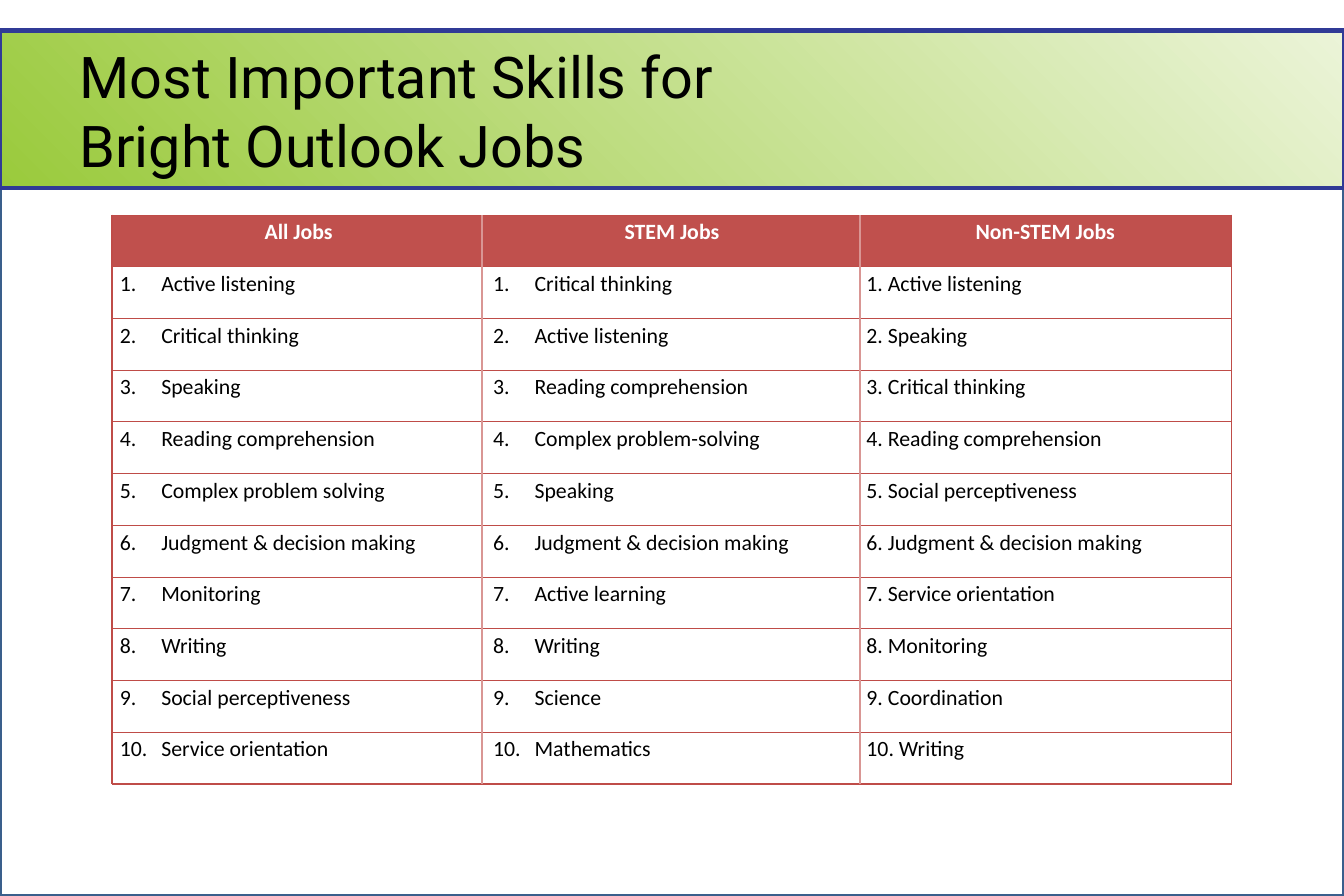
from dataclasses import dataclass

from lxml import etree
from pptx import Presentation
from pptx.dml.color import RGBColor
from pptx.enum.shapes import MSO_CONNECTOR, MSO_SHAPE
from pptx.enum.text import MSO_ANCHOR, MSO_AUTO_SIZE, PP_ALIGN
from pptx.oxml.ns import qn
from pptx.util import Inches, Pt

RECTANGLE, STRAIGHT = MSO_SHAPE.RECTANGLE, MSO_CONNECTOR.STRAIGHT
MIDDLE, NO_AUTOFIT = MSO_ANCHOR.MIDDLE, MSO_AUTO_SIZE.NONE
LEFT, CENTER = PP_ALIGN.LEFT, PP_ALIGN.CENTER


@dataclass(frozen=True)
class Theme:
    """Colours, fonts and type sizes of the slide."""
    title_font: str = "Roboto"
    table_font: str = "Calibri"
    title_size: int = 37
    table_size: int = 14
    text: str = "000000"
    header_text: str = "FFFFFF"
    header_fill: str = "C0504D"
    rule: str = "BF4C48"
    divider: str = "D99694"
    frame: str = "3A5F8C"
    band_line: str = "303A96"
    band_start: str = "9ACA3C"
    band_end: str = "EBF4D8"


THEME = Theme()
WIDTH, HEIGHT = 12, 8
TITLE = "Most Important Skills for\vBright Outlook Jobs"
SKILLS = {
    "All Jobs": [
        "Active listening", "Critical thinking", "Speaking",
        "Reading comprehension", "Complex problem solving",
        "Judgment & decision making", "Monitoring", "Writing",
        "Social perceptiveness", "Service orientation"],
    "STEM Jobs": [
        "Critical thinking", "Active listening", "Reading comprehension",
        "Complex problem-solving", "Speaking",
        "Judgment & decision making", "Active learning", "Writing",
        "Science", "Mathematics"],
    "Non-STEM Jobs": [
        "Active listening", "Speaking", "Critical thinking",
        "Reading comprehension", "Social perceptiveness",
        "Judgment & decision making", "Service orientation", "Monitoring",
        "Coordination", "Writing"],
}


def color(value):
    """Return the colour object of a hexadecimal value."""
    return RGBColor.from_string(value)


def add_panel(slide, box, line_color, line_width):
    """Add an unfilled outlined rectangle in the box."""
    panel = slide.shapes.add_shape(RECTANGLE, *map(Inches, box))
    panel.shadow.inherit = False
    panel.fill.background()
    panel.line.color.rgb = color(line_color)
    panel.line.width = Pt(line_width)
    return panel


def add_title_band(slide, box):
    """Fill the box with the gradient band and set the title on it."""
    left, top, width, height = box
    band = add_panel(slide, box, THEME.band_line, 3)
    band.fill.gradient()
    band.fill.gradient_angle = 45
    for stop, value in zip(band.fill.gradient_stops, (THEME.band_start, THEME.band_end)):
        stop.color.rgb = color(value)

    title = slide.shapes.title
    band.element.addnext(title.element)
    title.left, title.top = Inches(left + 0.05 * width), Inches(top + 0.05)
    title.width, title.height = Inches(0.9 * width), Inches(height - 0.08)
    frame = title.text_frame
    frame.text = TITLE
    frame.word_wrap, frame.auto_size = True, NO_AUTOFIT
    frame.vertical_anchor = MIDDLE
    frame.margin_left = frame.margin_right = Inches(0.11)
    frame.margin_top = frame.margin_bottom = Inches(0.06)
    paragraph = frame.paragraphs[0]
    paragraph.alignment = LEFT
    paragraph.font.name, paragraph.font.size = THEME.title_font, Pt(THEME.title_size)
    paragraph.font.color.rgb = color(THEME.text)


def set_borders(cell, sides):
    """Rule the named sides of a cell and clear the others."""
    properties = cell._tc.get_or_add_tcPr()
    for side in "LRTB":
        line = etree.SubElement(properties, qn(f"a:ln{side}"), w=str(Pt(0.75)))
        if side in sides:
            fill = etree.SubElement(line, qn("a:solidFill"))
            etree.SubElement(fill, qn("a:srgbClr"), val=THEME.rule)
        else:
            etree.SubElement(line, qn("a:noFill"))


def number_paragraph(paragraph, number):
    """Give a paragraph an automatic number and a hanging indent."""
    properties = paragraph._p.get_or_add_pPr()
    indent = Inches(0.37)
    properties.set("marL", str(indent))
    properties.set("indent", str(-indent))
    etree.SubElement(properties, qn("a:buFont"), typeface="+mj-lt")
    etree.SubElement(properties, qn("a:buAutoNum"), type="arabicPeriod", startAt=str(number))


def fill_cell(cell, text, row, column, last_column):
    """Write and format one cell of the skills table."""
    header = row == 0
    typed_number = column == last_column and not header
    cell.text = f"{row}. {text}" if typed_number else text
    cell.margin_left = cell.margin_right = Inches(0.07)
    cell.margin_top = cell.margin_bottom = 0
    set_borders(cell, "TB" + "L" * (column == 0) + "R" * (column == last_column))
    if header:
        cell.fill.solid()
        cell.fill.fore_color.rgb = color(THEME.header_fill)
    else:
        cell.fill.background()
    paragraph = cell.text_frame.paragraphs[0]
    paragraph.line_spacing = 1.15
    paragraph.alignment = CENTER if header else LEFT
    if not header and not typed_number:
        number_paragraph(paragraph, row)
    font = paragraph.font
    font.name, font.size, font.bold = THEME.table_font, Pt(THEME.table_size), header
    font.color.rgb = color(THEME.header_text if header else THEME.text)


def add_skills_table(slide, box):
    """Place the ranked skills and the column dividers in the box."""
    left, top, width, height = box
    columns = [[heading, *skills] for heading, skills in SKILLS.items()]
    row_count, last_column = len(columns[0]), len(columns) - 1
    table = slide.shapes.add_table(row_count, len(columns), *map(Inches, box)).table
    for column, texts in enumerate(columns):
        for row, text in enumerate(texts):
            fill_cell(table.cell(row, column), text, row, column, last_column)

    for share in (0.33, 0.668):
        x = Inches(left + share * width)
        divider = slide.shapes.add_connector(STRAIGHT, x, Inches(top), x, Inches(top + height))
        divider.line.color.rgb = color(THEME.divider)
        divider.line.width = Pt(1.25)
        etree.SubElement(divider.element.spPr, qn("a:effectLst"))


def main():
    """Build and save the presentation."""
    presentation = Presentation()
    presentation.slide_width, presentation.slide_height = Inches(WIDTH), Inches(HEIGHT)
    slide = presentation.slides.add_slide(presentation.slide_layouts[5])
    band_top, band_height = 0.27, 1.41
    body_top = band_top + band_height
    add_panel(slide, (0, body_top, WIDTH, HEIGHT - body_top), THEME.frame, 2)
    add_title_band(slide, (0, band_top, WIDTH, band_height))
    add_skills_table(slide, (WIDTH / 12, 0.24 * HEIGHT, WIDTH * 10 / 12, 5.08))
    presentation.save("out.pptx")


if __name__ == "__main__":
    main()
